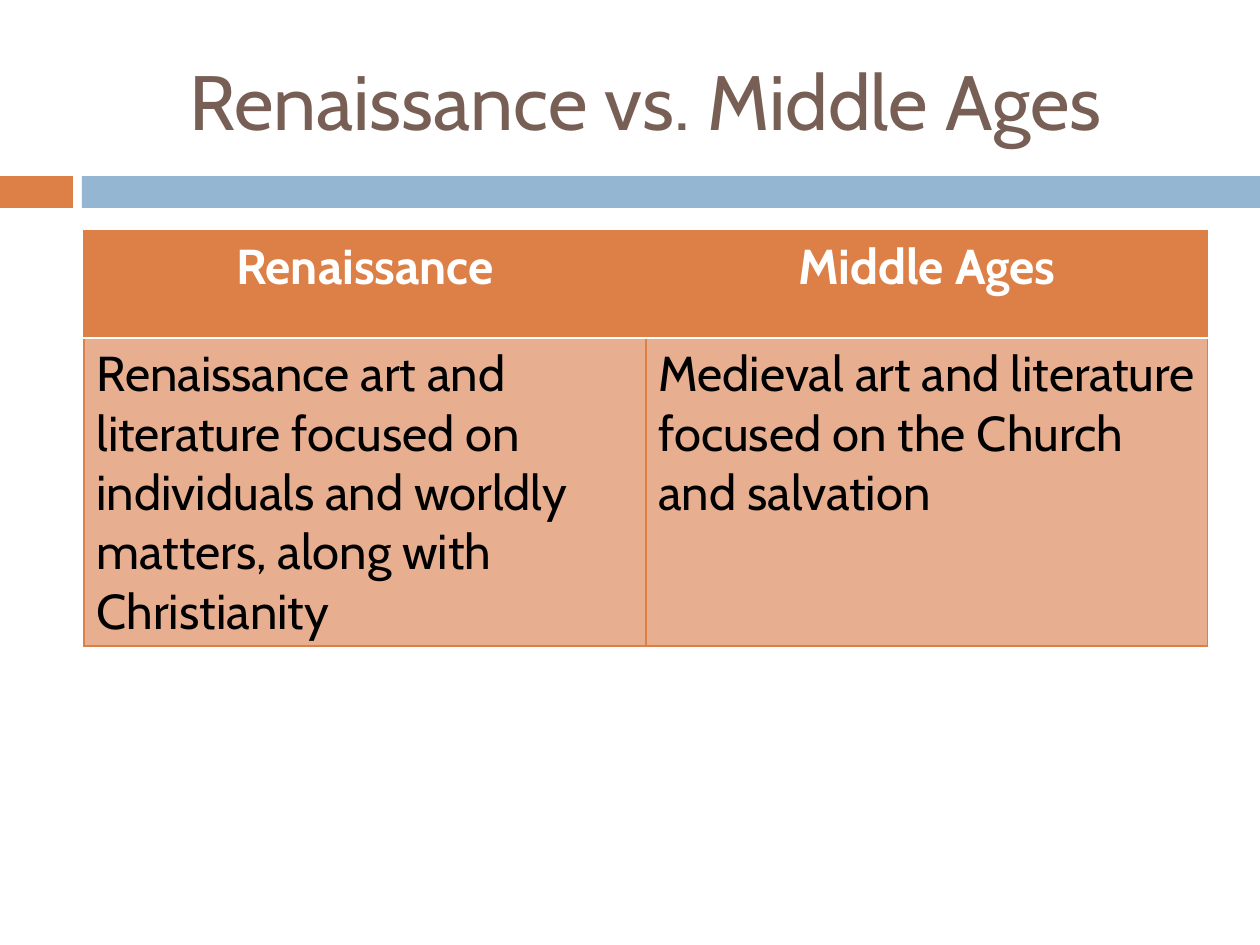
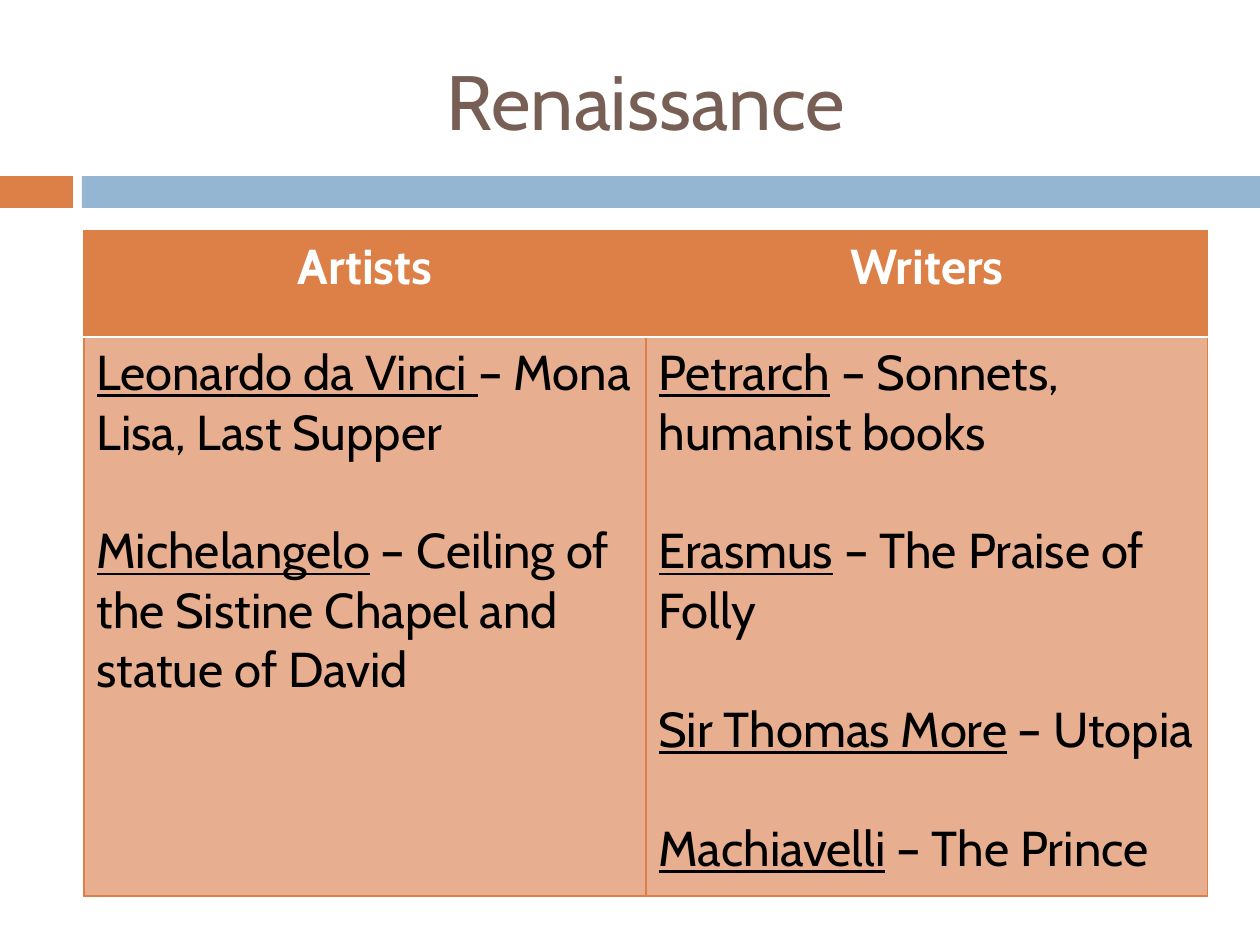
from lxml import etree
from pptx import Presentation
from pptx.dml.color import RGBColor
from pptx.enum.shapes import MSO_SHAPE
from pptx.enum.text import MSO_ANCHOR, PP_ALIGN
from pptx.oxml.ns import qn
from pptx.util import Pt

RECT = MSO_SHAPE.RECTANGLE
MIDDLE = MSO_ANCHOR.MIDDLE
LEFT, CENTER = PP_ALIGN.LEFT, PP_ALIGN.CENTER

ORANGE = RGBColor(0xDD, 0x80, 0x47)
PEACH = RGBColor(0xE7, 0xAE, 0x90)
BLUE = RGBColor(0x94, 0xB6, 0xD2)
BROWN = RGBColor(0x77, 0x5F, 0x55)
WHITE = RGBColor(0xFF, 0xFF, 0xFF)
BLACK = RGBColor(0x00, 0x00, 0x00)

# Content: each paragraph is a pair of (underlined name, plain text)
SLIDES = [
    {
        "title": "Renaissance vs. Middle Ages",
        "heads": ["Renaissance", "Middle Ages"],
        "cells": [
            [("", "Renaissance art and literature focused on individuals "
                  "and worldly matters, along with Christianity")],
            [("", "Medieval art and literature focused on the Church "
                  "and salvation")],
        ],
        "rows": [107, 308],
    },
    {
        "title": "Renaissance",
        "heads": ["Artists", "Writers"],
        "cells": [
            [("Leonardo da Vinci ", "– Mona Lisa, Last Supper"),
             ("Michelangelo",
              " – Ceiling of the Sistine Chapel and statue of David")],
            [("Petrarch", " – Sonnets, humanist books"),
             ("Erasmus", " – The Praise of Folly"),
             ("Sir Thomas More", " – Utopia"),
             ("Machiavelli", " – The Prince")],
        ],
        "rows": [106, 559],
    },
]

# Shared layout, in px
PX = 914400 // 126
WIDE, HIGH = 1260, 945
BANDS = [((0, 176, 73, 32), ORANGE), ((82, 176, 1178, 32), BLUE)]
TITLE_BOX = (84, 32, 1124, 136)
TABLE_X, TABLE_Y, COL_W = 84, 231, 562
GAP = Pt(34)

# Text formats
TITLE = {"name": "Cabin", "size": Pt(44), "color": BROWN}
HEAD = {"name": "Cabin", "size": Pt(28), "color": WHITE, "bold": True}
BODY = {"name": "Cabin", "size": Pt(28), "color": BLACK, "bold": False}

# Cell borders: (colour, width)
THIN, RULE = (ORANGE, Pt(0.79)), (WHITE, Pt(1.5))
HEAD_EDGE = {"L": THIN, "R": THIN, "T": THIN, "B": RULE}
BODY_EDGE = {"L": THIN, "R": THIN, "T": RULE, "B": THIN}


def emu(box):
    return [n * PX for n in box]


def add_run(para, text, form, **more):
    run = para.add_run()
    run.text = text
    for key, val in {**form, **more}.items():
        if key == "color":
            run.font.color.rgb = val
        else:
            setattr(run.font, key, val)


def fill_cell(cell, paras, form, align, color, edges):
    cell.fill.solid()
    cell.fill.fore_color.rgb = color
    props = cell._tc.get_or_add_tcPr()
    for pos, (side, (tint, width)) in enumerate(edges.items()):
        line = etree.Element(qn(f"a:ln{side}"), w=str(width))
        solid = etree.SubElement(line, qn("a:solidFill"))
        etree.SubElement(solid, qn("a:srgbClr"), val=str(tint))
        props.insert(pos, line)
    frame = cell.text_frame
    for num, (name, text) in enumerate(paras):
        para = frame.add_paragraph() if num else frame.paragraphs[0]
        para.alignment = align
        if num:
            para.space_before = GAP
        if name:
            add_run(para, name, form, underline=True)
        add_run(para, text, form)


def add_frame(slide, title):
    # Bands
    for box, color in BANDS:
        band = slide.shapes.add_shape(RECT, *emu(box))
        band.shadow.inherit = False
        band.fill.solid()
        band.fill.fore_color.rgb = color
        band.line.fill.background()
    # Title
    frame = slide.shapes.add_textbox(*emu(TITLE_BOX)).text_frame
    frame.word_wrap = True
    frame.vertical_anchor = MIDDLE
    para = frame.paragraphs[0]
    para.alignment = CENTER
    add_run(para, title, TITLE)


def add_grid(slide, heads, cells, rows):
    cols = len(heads)
    box = (TABLE_X, TABLE_Y, COL_W * cols, sum(rows))
    table = slide.shapes.add_table(len(rows), cols, *emu(box)).table
    table.horz_banding = False
    for row, high in zip(table.rows, rows):
        row.height = high * PX
    for col, (head, paras) in enumerate(zip(heads, cells)):
        table.columns[col].width = COL_W * PX
        fill_cell(table.cell(0, col), [("", head)], HEAD, CENTER,
                  ORANGE, HEAD_EDGE)
        fill_cell(table.cell(1, col), paras, BODY, LEFT, PEACH, BODY_EDGE)


def main():
    deck = Presentation()
    deck.slide_width, deck.slide_height = emu((WIDE, HIGH))
    for data in SLIDES:
        slide = deck.slides.add_slide(deck.slide_layouts[6])
        add_frame(slide, data["title"])
        add_grid(slide, data["heads"], data["cells"], data["rows"])
    deck.save("out.pptx")


if __name__ == "__main__":
    main()
